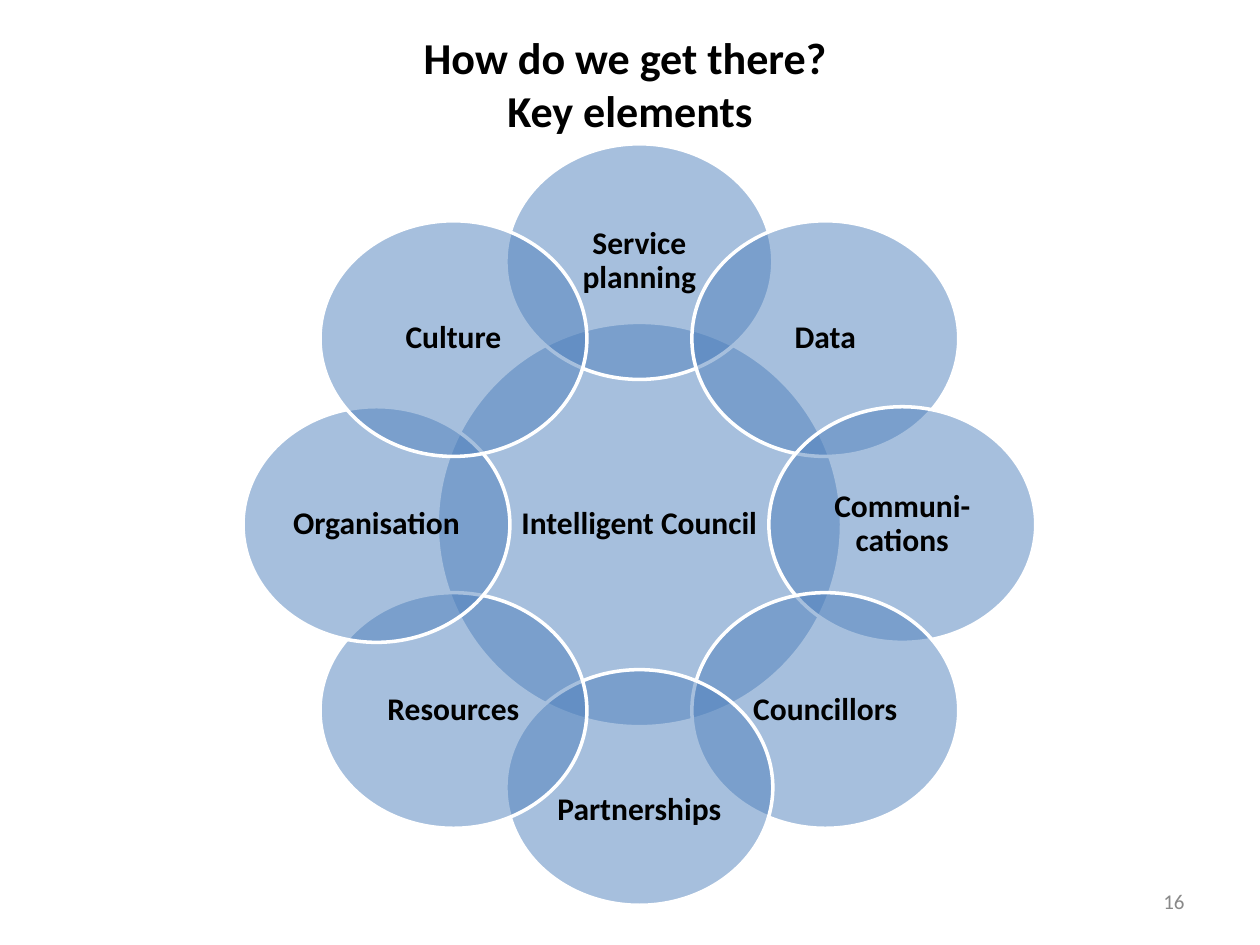
import math

import pptx
import pptx.util
import pptx.dml.color
import pptx.enum.shapes
import pptx.enum.text
import pptx.oxml
import pptx.oxml.ns
from pptx.util import Cm, Pt

BLACK = pptx.dml.color.RGBColor(0x00, 0x00, 0x00)
WHITE = pptx.dml.color.RGBColor(0xFF, 0xFF, 0xFF)
BLUE = pptx.dml.color.RGBColor(0x4F, 0x81, 0xBD)
GREY = pptx.dml.color.RGBColor(0x89, 0x89, 0x89)

ALIGN = pptx.enum.text.PP_ALIGN
MIDDLE = pptx.enum.text.MSO_ANCHOR.MIDDLE

ELEMENTS = ["Service planning", "Data", "Communi-cations", "Councillors",
            "Partnerships", "Resources", "Organisation", "Culture"]


def format_paragraph(p, size, color, bold, align):
    p.alignment = align
    p.font.name = "Calibri"
    p.font.size = Pt(size)
    p.font.bold = bold
    p.font.color.rgb = color


def add_title(s, left, top, width, height):
    sp = s.shapes.title
    sp.left, sp.top, sp.width, sp.height = Cm(left), Cm(top), Cm(width), Cm(height)
    tf = sp.text_frame
    tf.text = "How do we get there? \vKey elements"
    tf.vertical_anchor = MIDDLE
    tf.auto_size = pptx.enum.text.MSO_AUTO_SIZE.NONE
    format_paragraph(tf.paragraphs[0], 25.2, BLACK, True, ALIGN.CENTER)


def add_slide_number(s, left, top, width, height):
    sp = s.shapes.add_textbox(Cm(left), Cm(top), Cm(width), Cm(height))
    tf = sp.text_frame
    tf.word_wrap = True
    tf.vertical_anchor = MIDDLE
    tf.text = "16"
    format_paragraph(tf.paragraphs[0], 12, GREY, False, ALIGN.RIGHT)


def add_circle(s, text, cx, cy, width, height, drop=0):
    """Half-transparent ellipse around (cx, cy); drop lowers its label."""
    sp = s.shapes.add_shape(pptx.enum.shapes.MSO_SHAPE.OVAL,
                            Cm(cx - width / 2), Cm(cy - height / 2),
                            Cm(width), Cm(height))
    sp.shadow.inherit = False
    sp.fill.solid()
    sp.fill.fore_color.rgb = BLUE
    color = sp.fill._xPr.find(".//" + pptx.oxml.ns.qn("a:srgbClr"))
    color.append(pptx.oxml.parse_xml(
        '<a:alpha %s val="50000"/>' % pptx.oxml.ns.nsdecls("a")))
    sp.line.color.rgb = WHITE
    sp.line.width = Pt(2)

    tf = sp.text_frame
    tf.word_wrap = True
    tf.vertical_anchor = MIDDLE
    tf.margin_left = tf.margin_right = tf.margin_bottom = Cm(0.08)
    tf.margin_top = Cm(0.08 + 2 * drop)
    tf.text = text
    p = tf.paragraphs[0]
    p.line_spacing = 0.9
    format_paragraph(p, 18, BLACK, True, ALIGN.CENTER)


def add_ring(s, left, top, width, height):
    """Central circle with the elements clockwise around it from the top."""
    cx, cy = left + width / 2, top + height / 2
    petal_w, petal_h = 5.38, 4.75
    radius = (width - petal_w) / 2
    add_circle(s, "Intelligent Council", cx, cy, 8.15, 8.15)
    for i, text in enumerate(ELEMENTS):
        angle = 2 * math.pi * i / len(ELEMENTS)
        drop = 0.46 if text == "Partnerships" else 0
        add_circle(s, text, cx + radius * math.sin(angle),
                   cy - radius * math.cos(angle), petal_w, petal_h, drop)


def main():
    prs = pptx.Presentation()
    prs.slide_width, prs.slide_height = Cm(25.4), Cm(19.05)
    s = prs.slides.add_slide(prs.slide_layouts[5])
    add_title(s, 1.27, 0.51, 22.86, 2.34)
    add_slide_number(s, 18.2, 17.65, 5.93, 1.02)
    add_ring(s, 4.9, 2.9, 15.98, 15.35)
    prs.save("out.pptx")


if __name__ == "__main__":
    main()
